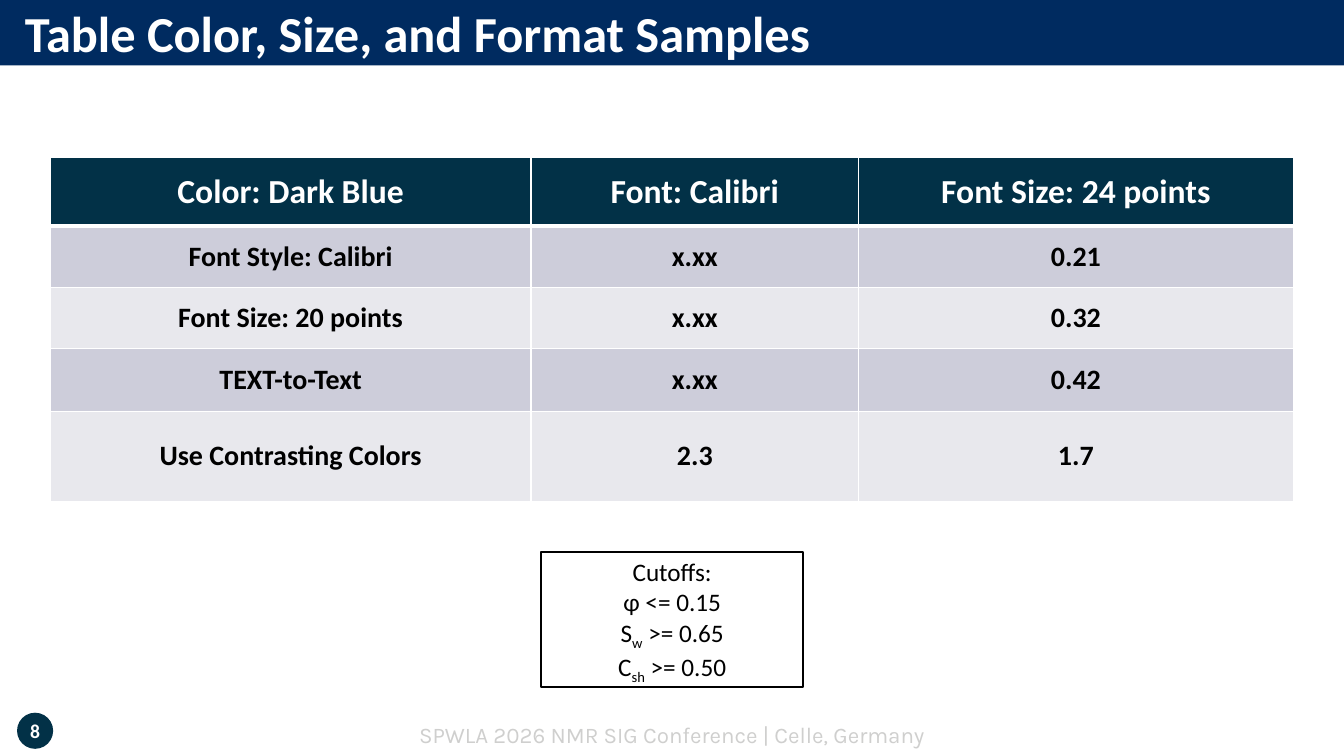
from lxml import etree
from pptx import Presentation
from pptx import util as u
from pptx.dml.color import RGBColor
from pptx.enum import shapes, text
from pptx.oxml import ns

WHITE = RGBColor(0xFF, 0xFF, 0xFF)
BLACK = RGBColor(0x00, 0x00, 0x00)
NAVY = RGBColor(0x00, 0x2B, 0x60)
DARK_BLUE = RGBColor(0x02, 0x31, 0x47)
BAND_DARK = RGBColor(0xCD, 0xCD, 0xDA)
BAND_LIGHT = RGBColor(0xE8, 0xE8, 0xED)
FOOTER_GREY = RGBColor(0xCF, 0xCF, 0xCE)

WIDTH, HEIGHT = 33.87, 19.05
CENTER, LEFT = text.PP_ALIGN.CENTER, text.PP_ALIGN.LEFT
MIDDLE, TOP = text.MSO_ANCHOR.MIDDLE, text.MSO_ANCHOR.TOP


class SlideBuilder:
    """Holds the text style and the current slide; lengths are in cm."""

    def __init__(self, slide, font="Calibri"):
        self.slide = slide
        self.font = font

    def add_lines(self, frame, lines, size, color, bold=False, align=CENTER, font=None):
        """Each line is a list of (wording, is_subscript) spans."""
        for index, spans in enumerate(lines):
            para = frame.paragraphs[0] if index == 0 else frame.add_paragraph()
            para.alignment = align
            for wording, subscript in spans:
                span = para.add_run()
                span.text = wording
                span.font.name = font or self.font
                span.font.size = u.Pt(size)
                span.font.bold = bold
                span.font.color.rgb = color
                if subscript:
                    span._r.get_or_add_rPr().set("baseline", "-25000")

    def label(self, area, wording, size, color, inset=0.25, **style):
        box = self.slide.shapes.add_textbox(*map(u.Cm, area))
        frame = box.text_frame
        frame.word_wrap = True
        frame.vertical_anchor = MIDDLE
        frame.margin_left = u.Cm(inset)
        self.add_lines(frame, [[(wording, False)]], size, color, **style)

    def shape(self, kind, area, fill=None, line=None):
        shape = self.slide.shapes.add_shape(kind, *map(u.Cm, area))
        shape.shadow.inherit = False
        if fill is None:
            shape.fill.background()
        else:
            shape.fill.solid()
            shape.fill.fore_color.rgb = fill
        if line is None:
            shape.line.fill.background()
        else:
            shape.line.color.rgb = line
            shape.line.width = u.Pt(1.5)
        return shape

    def framed_text(self, area, lines, size, color):
        box = self.shape(shapes.MSO_SHAPE.RECTANGLE, area, line=color)
        frame = box.text_frame
        frame.word_wrap = True
        frame.vertical_anchor = TOP
        self.add_lines(frame, lines, size, color)

    def borders(self, cell, widths):
        properties = cell._tc.get_or_add_tcPr()
        for side, width in widths.items():
            edge = etree.SubElement(properties, ns.qn(f"a:ln{side}"), w=str(u.Pt(width)))
            fill = etree.SubElement(edge, ns.qn("a:solidFill"))
            etree.SubElement(fill, ns.qn("a:srgbClr"), val=str(WHITE))

    def table(self, left, top, column_widths, row_heights, rows):
        table = self.slide.shapes.add_table(
            len(rows), len(column_widths), u.Cm(left), u.Cm(top),
            u.Cm(sum(column_widths)), u.Cm(sum(row_heights))).table
        for column, width in zip(table.columns, column_widths):
            column.width = u.Cm(width)
        for row, height in zip(table.rows, row_heights):
            row.height = u.Cm(height)
        for r, row in enumerate(rows):
            header = r == 0
            fill = DARK_BLUE if header else (BAND_DARK if r % 2 else BAND_LIGHT)
            for c, wording in enumerate(row):
                cell = table.cell(r, c)
                # A thick rule separates the header from the body
                self.borders(cell, {"L": 1, "R": 1, "T": 3 if r == 1 else 1,
                                    "B": 3 if header else 1})
                cell.fill.solid()
                cell.fill.fore_color.rgb = fill
                cell.vertical_anchor = MIDDLE
                self.add_lines(cell.text_frame, [[(wording, False)]],
                               24 if header else 20, WHITE if header else BLACK, bold=True)


def main():
    deck = Presentation()
    deck.slide_width, deck.slide_height = u.Cm(WIDTH), u.Cm(HEIGHT)
    page = SlideBuilder(deck.slides.add_slide(deck.slide_layouts[6]))

    # Footer and page number
    page.label((0, 18.14, WIDTH, 0.76), "SPWLA 2026 NMR SIG Conference | Celle, Germany",
               16, FOOTER_GREY, font="Karla")
    page.shape(shapes.MSO_SHAPE.OVAL, (0.43, 17.96, 0.91, 0.91), fill=DARK_BLUE)
    page.label((0.2, 17.91, 1.37, 1.02), "8", 14, WHITE, bold=True)

    # Title bar
    title_area = (0, -0.03, WIDTH, 1.68)
    page.shape(shapes.MSO_SHAPE.RECTANGLE, title_area, fill=NAVY)
    page.label(title_area, "Table Color, Size, and Format Samples", 36, WHITE,
               inset=0.63, bold=True, align=LEFT)

    # Sample table
    page.table(1.27, 3.97, [12.11, 8.26, 10.95], [1.72, 1.55, 1.55, 1.58, 2.26], [
        ["Color: Dark Blue", "Font: Calibri", "Font Size: 24 points"],
        ["Font Style: Calibri", "x.xx", "0.21"],
        ["Font Size: 20 points", "x.xx", "0.32"],
        ["TEXT-to-Text", "x.xx", "0.42"],
        ["Use Contrasting Colors", "2.3", "1.7"],
    ])

    # Cutoffs box
    page.framed_text((13.64, 13.9, 6.6, 3.42), [
        [("Cutoffs:", False)],
        [("φ <= 0.15", False)],
        [("S", False), ("w", True), (" >= 0.65", False)],
        [("C", False), ("sh", True), (" >= 0.50", False)],
    ], 18, BLACK)

    deck.save("out.pptx")


if __name__ == "__main__":
    main()
